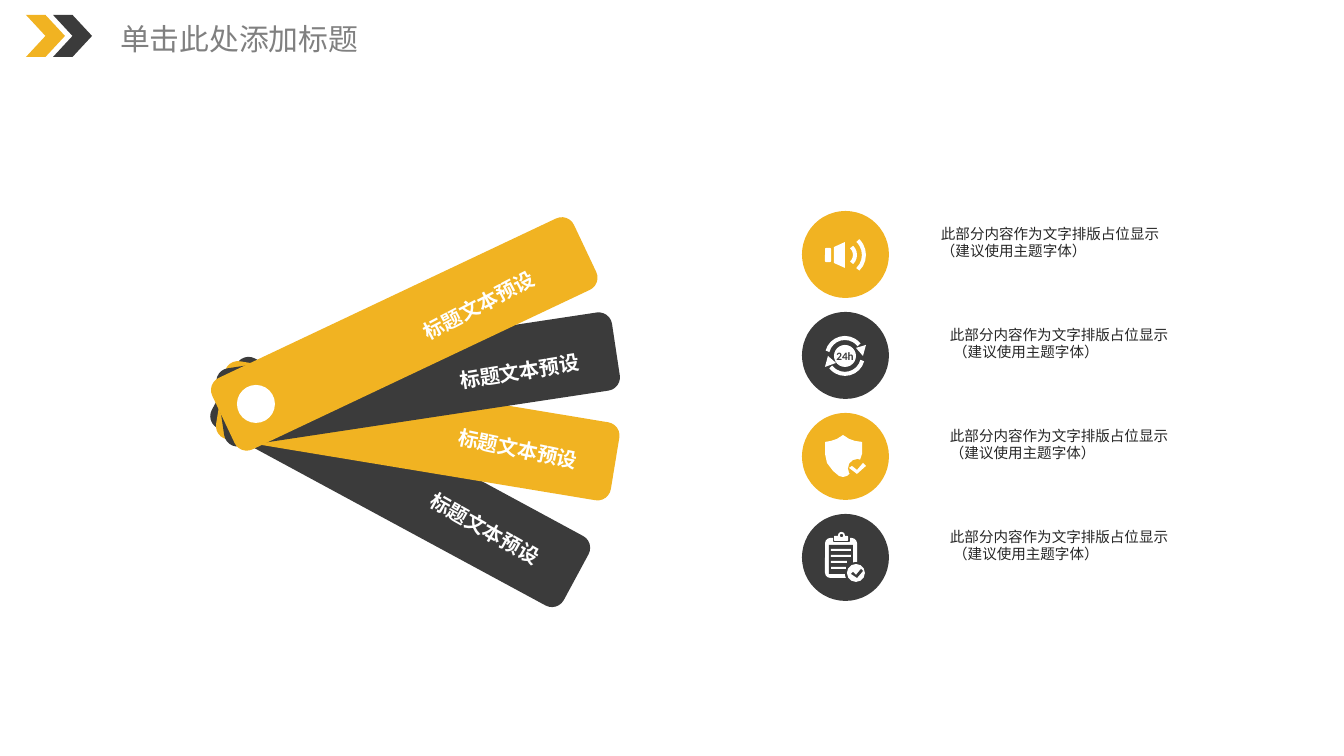
from math import cos, radians, sin

from pptx import Presentation
from pptx.dml.color import RGBColor
from pptx.enum.shapes import MSO_SHAPE
from pptx.enum.text import MSO_ANCHOR, PP_ALIGN
from pptx.util import Pt

PX = 914400 / 134.4
YELLOW = RGBColor(0xF1, 0xB3, 0x22)
DARK = RGBColor(0x3B, 0x3B, 0x3B)
WHITE = RGBColor(0xFF, 0xFF, 0xFF)
GRAY = RGBColor(0x80, 0x80, 0x80)
INK = RGBColor(0x26, 0x26, 0x26)

prs = Presentation()
prs.slide_width = round(1344 * PX)
prs.slide_height = round(756 * PX)
s = prs.slides.add_slide(prs.slide_layouts[6])


def add_preset(kind, x, y, w, h, color):
    sp = s.shapes.add_shape(kind, *[round(v * PX) for v in (x, y, w, h)])
    sp.shadow.inherit = False
    sp.fill.solid()
    sp.fill.fore_color.rgb = color
    sp.line.fill.background()
    return sp


def add_text(text, x, y, w, h, size, color, font="Calibri", bold=False):
    sp = s.shapes.add_textbox(*[round(v * PX) for v in (x, y, w, h)])
    tf = sp.text_frame
    tf.word_wrap = False
    tf.text = text
    for r in tf.paragraphs[0].runs:
        r.font.size = Pt(size)
        r.font.name = font
        r.font.bold = bold
        r.font.color.rgb = color
    return sp


add_preset(MSO_SHAPE.CHEVRON, 26, 15, 39, 42, YELLOW)
add_preset(MSO_SHAPE.CHEVRON, 53, 15, 39, 42, DARK)
add_text("单击此处添加标题", 107, 14, 269, 50, 16, GRAY, "Noto Sans CJK SC")

PIVOT_X, PIVOT_Y, REACH = 256, 404, 164
BLADE_W, BLADE_H = 400, 79
for angle, color in [(28.4, DARK), (9.4, YELLOW), (-8.6, DARK), (-25.3, YELLOW)]:
    cx = PIVOT_X + REACH * cos(radians(angle))
    cy = PIVOT_Y + REACH * sin(radians(angle))
    blade = add_preset(MSO_SHAPE.ROUNDED_RECTANGLE, cx - BLADE_W / 2,
                       cy - BLADE_H / 2, BLADE_W, BLADE_H, color)
    blade.adjustments[0] = 0.17
    blade.rotation = angle
add_preset(MSO_SHAPE.OVAL, PIVOT_X - 19, PIVOT_Y - 19, 38, 38, WHITE)

for x, y, angle in [(411, 285, -27.7), (453, 352, -9.1), (452, 431, 12), (419, 512, 29.4)]:
    label = add_text("标题文本预设", x, y, 140, 34, 10.8, WHITE, bold=True)
    label.text_frame.margin_left = 0
    label.text_frame.paragraphs[0].alignment = PP_ALIGN.RIGHT
    label.rotation = angle

items = [
    (YELLOW, 889, "此部分内容作为文字排版占位显示\v（建议使用主题字体）"),
    (DARK, 898, "此部分内容作为文字排版占位显示\v （建议使用主题字体）"),
    (YELLOW, 898, "此部分内容作为文字排版占位显示\v（建议使用主题字体）"),
    (DARK, 898, "此部分内容作为文字排版占位显示\v （建议使用主题字体）"),
]
for i, (color, x, text) in enumerate(items):
    y = 211 + 101 * i
    add_preset(MSO_SHAPE.OVAL, 802, y, 87, 87, color)
    desc = add_text(text, x, y + 7, 296, 62, 7.8, INK)
    desc.text_frame.word_wrap = True
    desc.text_frame.margin_left = round(52 * PX)

arcs = [
    (844, 255, 11, 314, 46, 4), (844, 255, 20, 314, 46, 4),
    (845, 356, 18, 195, 322, 4), (845, 356, 18, 15, 142, 4),
]
for cx, cy, radius, start, end, width in arcs:
    arc = add_preset(MSO_SHAPE.ARC, cx - radius, cy - radius, 2 * radius, 2 * radius, WHITE)
    arc.fill.background()
    arc.adjustments[0] = start * 0.6
    arc.adjustments[1] = end * 0.6
    arc.line.color.rgb = WHITE
    arc.line.width = round(width * PX)

horn = [(834, 247), (845, 242), (845, 268), (834, 263)]
right_head = [(856, 348), (866, 345), (863, 356)]
left_head = [(825, 367), (828, 356), (836, 363)]
shield = [(843, 435), (849, 439), (855, 441), (862, 442), (862, 454), (859, 463),
          (853, 471), (847, 476), (843, 477), (839, 476), (833, 471), (827, 463),
          (825, 454), (825, 442), (831, 441), (837, 439)]
shield_check = [(857, 474), (849, 468), (852, 466), (857, 470), (863, 463), (866, 466)]
board_check = [(857, 578), (851, 574), (853, 572), (856, 575), (861, 569), (863, 571)]

icon_parts = [
    (MSO_SHAPE.ROUNDED_RECTANGLE, 825, 248, 6, 14, WHITE),
    horn, right_head, left_head,
    (MSO_SHAPE.OVAL, 834, 345, 22, 22, WHITE),
    shield,
    (MSO_SHAPE.OVAL, 848, 459, 19, 19, YELLOW),
    shield_check,
    (MSO_SHAPE.ROUNDED_RECTANGLE, 825, 538, 32, 40, WHITE),
    (MSO_SHAPE.RECTANGLE, 829, 545, 24, 29, DARK),
    (MSO_SHAPE.ROUNDED_RECTANGLE, 833, 534, 17, 8, DARK),
    (MSO_SHAPE.ROUNDED_RECTANGLE, 834, 536, 14, 5, WHITE),
    (MSO_SHAPE.OVAL, 838, 532, 7, 7, WHITE),
    (MSO_SHAPE.OVAL, 840, 534, 3, 3, DARK),
    (MSO_SHAPE.RECTANGLE, 831, 549, 20, 2, WHITE),
    (MSO_SHAPE.RECTANGLE, 831, 555, 20, 2, WHITE),
    (MSO_SHAPE.RECTANGLE, 831, 561, 16, 2, WHITE),
    (MSO_SHAPE.RECTANGLE, 831, 567, 15, 2, WHITE),
    (MSO_SHAPE.OVAL, 845, 562, 23, 23, DARK),
    (MSO_SHAPE.OVAL, 847, 564, 18, 18, WHITE),
    board_check,
]
for part in icon_parts:
    if isinstance(part, tuple):
        add_preset(*part)
        continue
    builder = s.shapes.build_freeform(*part[0], scale=PX)
    builder.add_line_segments(part[1:], close=True)
    sp = builder.convert_to_shape()
    sp.shadow.inherit = False
    sp.fill.solid()
    sp.fill.fore_color.rgb = DARK if part is board_check else WHITE
    sp.line.fill.background()

badge = add_text("24h", 830, 346, 30, 20, 6, DARK, bold=True)
tf = badge.text_frame
tf.margin_left = tf.margin_right = tf.margin_top = tf.margin_bottom = 0
tf.vertical_anchor = MSO_ANCHOR.MIDDLE
tf.paragraphs[0].alignment = PP_ALIGN.CENTER

prs.save("out.pptx")
